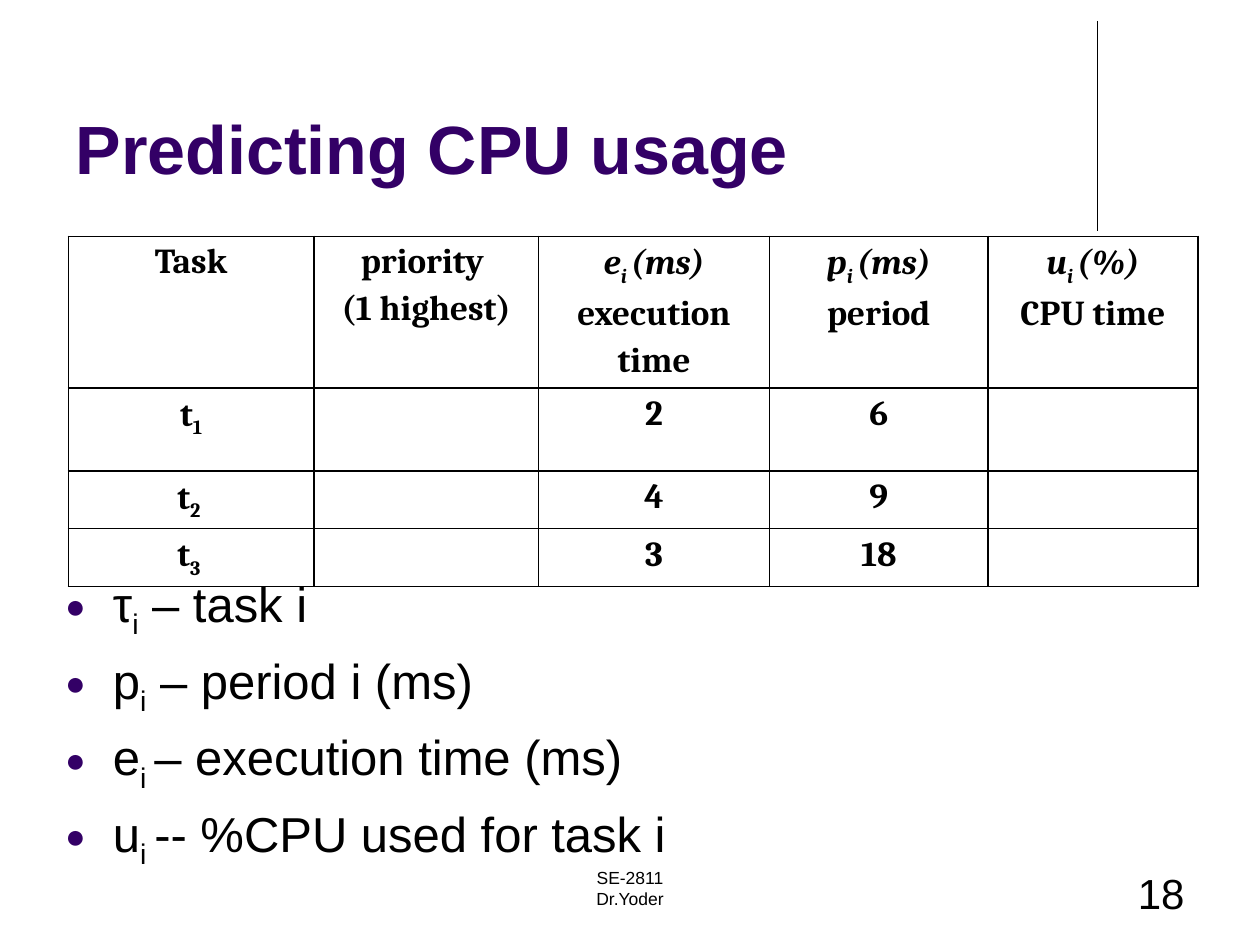
"""Build the slide about predicting CPU usage from task timings."""
from dataclasses import dataclass
from typing import NamedTuple

from lxml import etree
from pptx import Presentation
from pptx.dml.color import RGBColor
from pptx.enum.shapes import MSO_CONNECTOR
from pptx.enum.text import MSO_ANCHOR, MSO_AUTO_SIZE, PP_ALIGN
from pptx.oxml.ns import qn
from pptx.util import Inches, Pt

BLACK = RGBColor(0x00, 0x00, 0x00)
PURPLE = RGBColor(0x33, 0x00, 0x66)
LEFT, CENTER, RIGHT = PP_ALIGN.LEFT, PP_ALIGN.CENTER, PP_ALIGN.RIGHT
TOP, BOTTOM = MSO_ANCHOR.TOP, MSO_ANCHOR.BOTTOM
NO_AUTOFIT = MSO_AUTO_SIZE.NONE
STRAIGHT = MSO_CONNECTOR.STRAIGHT
WIDTH, HEIGHT = Inches(10), Inches(7.5)
GRID_COLUMNS = 120


class Frame(NamedTuple):
    """A rectangle in grid columns and rows."""

    left: float
    top: float
    width: float
    height: float


class Span(NamedTuple):
    """A piece of text with its own slant and baseline."""

    text: str
    italic: bool = False
    subscript: bool = False


@dataclass(frozen=True)
class Style:
    """The look shared by all spans of a text."""

    size: float
    font: str = "Arial"
    color: RGBColor = BLACK
    bold: bool = False


@dataclass(frozen=True)
class Label:
    """A small text box at the foot of the page."""

    frame: Frame
    lines: tuple
    style: Style
    align: PP_ALIGN


TITLE_STYLE = Style(39, color=PURPLE, bold=True)
BODY_STYLE = Style(28)
CELL_STYLE = Style(20, "Cambria", bold=True)

TITLE_FRAME = Frame(6, 1.5, 99, 17)
BODY_FRAME = Frame(5, 54, 109, 26.4)
RULE = Frame(104.5, 2, 0, 20)
TABLE_CORNER = (6.5, 22.5)
TABLE_COLUMNS = (23.4, 21.4, 22, 20.8, 20)
TABLE_ROWS = (13.8, 7.9, 5.5, 5.5)

LABELS = (
    Label(Frame(41, 82, 38, 6), ("SE-2811", "Dr.Yoder"), Style(10), CENTER),
    Label(Frame(86, 82, 28, 6), ("18",), Style(24), RIGHT),
)
TERMS = (
    ("τ", "i", " – task i"),
    ("p", "i", " – period i (ms)"),
    ("e", "i ", "– execution time (ms)"),
    ("u", "i ", "-- %CPU used for task i"),
)
TASKS = (("1", "2", "6"), ("2 ", "4", "9"), ("3 ", "3", "18"))


def grid(count: float) -> int:
    """Turn grid columns or rows into a length."""
    return round(WIDTH * count / GRID_COLUMNS)


def place(shape, frame: Frame) -> None:
    """Move a shape to its frame."""
    shape.left, shape.top, shape.width, shape.height = map(grid, frame)


def symbol(name: str, index: str, unit: str) -> list:
    """Return an italic variable with its index and unit."""
    return [Span(name, True), Span(index, True, True), Span(unit, True)]


def write(para, spans: list, style: Style, align: PP_ALIGN) -> None:
    """Add spans to a paragraph, breaking lines at newlines."""
    para.alignment = align
    for span in spans:
        for number, piece in enumerate(span.text.split("\n")):
            if number:
                para.add_line_break()
            if not piece:
                continue
            run = para.add_run()
            run.text = piece
            font = run.font
            font.name, font.size, font.bold = style.font, Pt(style.size), style.bold
            font.color.rgb = style.color
            font.italic = span.italic
            if span.subscript:
                run.font._element.set("baseline", "-25000")


def write_all(text_frame, paragraphs: list, style: Style, align: PP_ALIGN) -> list:
    """Fill a text frame and return its paragraphs."""
    for number, spans in enumerate(paragraphs):
        para = text_frame.add_paragraph() if number else text_frame.paragraphs[0]
        write(para, spans, style, align)
    return list(text_frame.paragraphs)


def add_bullet(para) -> None:
    """Give a paragraph a hanging purple dot."""
    properties = para._p.get_or_add_pPr()
    properties.set("marL", str(Inches(0.38)))
    properties.set("indent", str(-Inches(0.38)))
    color = etree.SubElement(properties, qn("a:buClr"))
    etree.SubElement(color, qn("a:srgbClr"), val=str(PURPLE))
    etree.SubElement(properties, qn("a:buSzPct"), val="70000")
    etree.SubElement(properties, qn("a:buFont"), typeface="Arial")
    etree.SubElement(properties, qn("a:buChar"), char="●")


def add_borders(cell) -> None:
    """Draw a thin black line on each side of a cell."""
    properties = cell._tc.get_or_add_tcPr()
    for side in ("a:lnL", "a:lnR", "a:lnT", "a:lnB"):
        line = etree.SubElement(properties, qn(side), w=str(Pt(1)))
        fill = etree.SubElement(line, qn("a:solidFill"))
        etree.SubElement(fill, qn("a:srgbClr"), val=str(BLACK))


def add_rule(page) -> None:
    """Draw the upright line beside the title."""
    left, top = grid(RULE.left), grid(RULE.top)
    rule = page.shapes.add_connector(STRAIGHT, left, top, left, top + grid(RULE.height))
    rule.line.color.rgb = BLACK
    rule.line.width = Pt(0.75)
    etree.SubElement(rule._element.spPr, qn("a:effectLst"))


def add_label(page, label: Label) -> None:
    """Add a footer text box."""
    box = page.shapes.add_textbox(*map(grid, label.frame))
    box.text_frame.word_wrap = True
    write_all(box.text_frame, [[Span(line)] for line in label.lines], label.style, label.align)


def add_task_table(page) -> None:
    """Add the table of task timings."""
    header = [
        [[Span("Task")]],
        [[Span("priority \n(1 highest)")]],
        [symbol("e", "i ", "(ms)\n") + [Span("execution time")]],
        [symbol("p", "i ", "(ms)"), [Span("period")]],
        [symbol("u", "i ", "(%)"), [Span("CPU time")]],
    ]
    body = [
        [[[Span("t"), Span(index, subscript=True)]], [], [[Span(execution)]], [[Span(period)]], []]
        for index, execution, period in TASKS
    ]
    size = (sum(TABLE_COLUMNS), sum(TABLE_ROWS))
    table = page.shapes.add_table(
        len(TABLE_ROWS), len(TABLE_COLUMNS), *map(grid, TABLE_CORNER + size)
    ).table
    table.first_row = table.horz_banding = False
    for column, width in zip(table.columns, TABLE_COLUMNS):
        column.width = grid(width)
    for row, height, contents in zip(table.rows, TABLE_ROWS, [header] + body):
        row.height = grid(height)
        for cell, paragraphs in zip(row.cells, contents):
            add_borders(cell)
            cell.fill.background()
            cell.margin_left = cell.margin_right = Inches(0.07)
            cell.margin_top = cell.margin_bottom = 0
            for para in write_all(cell.text_frame, paragraphs, CELL_STYLE, CENTER):
                para.line_spacing = 1.15


def main() -> None:
    """Build and save the deck."""
    deck = Presentation()
    deck.slide_width, deck.slide_height = WIDTH, HEIGHT
    page = deck.slides.add_slide(deck.slide_layouts[1])
    add_rule(page)
    title, body = page.placeholders
    for box, frame, anchor in ((title, TITLE_FRAME, BOTTOM), (body, BODY_FRAME, TOP)):
        place(box, frame)
        box.text_frame.auto_size = NO_AUTOFIT
        box.text_frame.vertical_anchor = anchor
    write_all(title.text_frame, [[Span("Predicting CPU usage")]], TITLE_STYLE, LEFT)
    terms = [[Span(name), Span(index, subscript=True), Span(rest)] for name, index, rest in TERMS]
    for number, para in enumerate(write_all(body.text_frame, terms, BODY_STYLE, LEFT)):
        add_bullet(para)
        para.space_before = Pt(5.6 if number else 0)
    for label in LABELS:
        add_label(page, label)
    add_task_table(page)
    deck.save("out.pptx")


if __name__ == "__main__":
    main()
